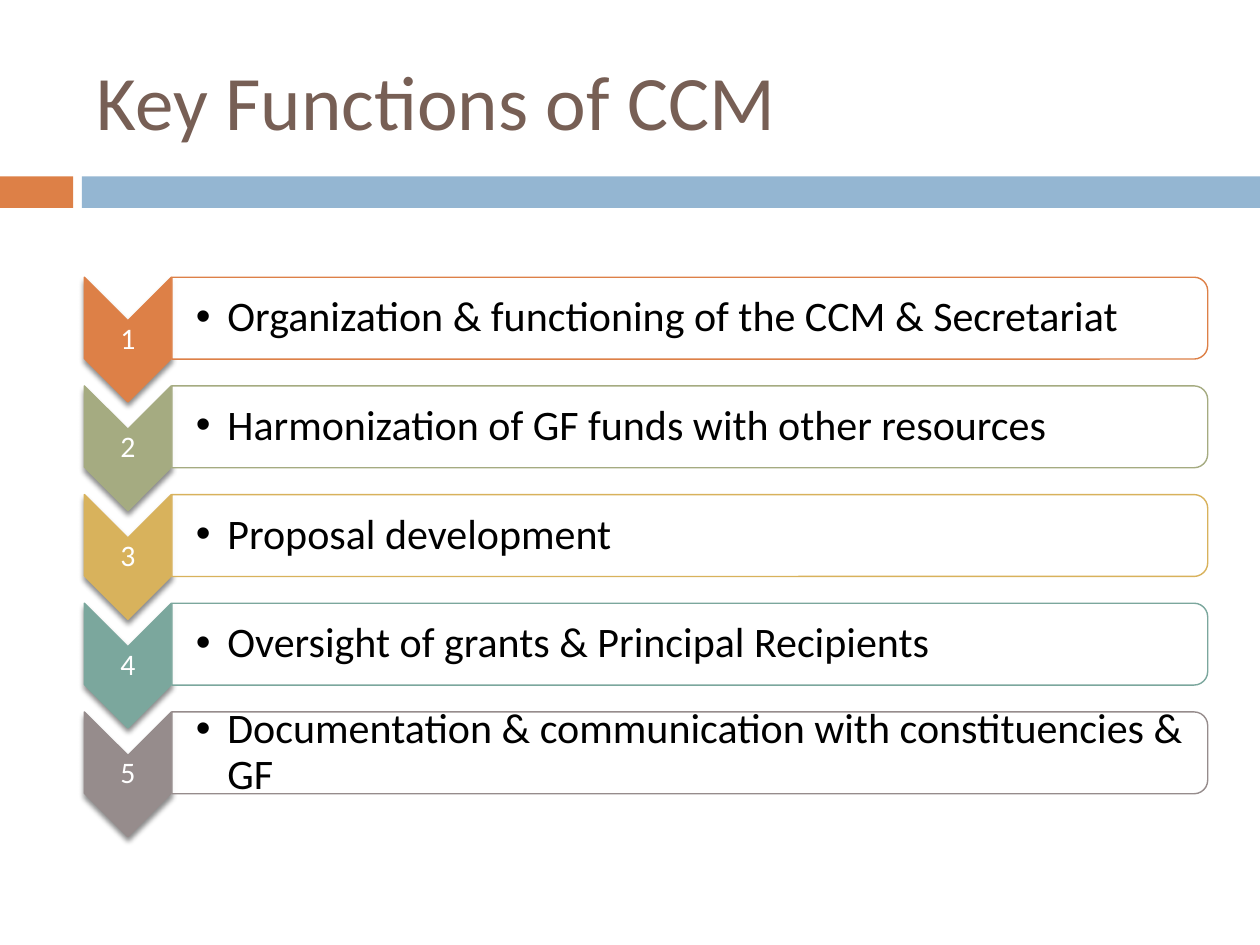
from dataclasses import dataclass

import lxml.etree
import pptx
import pptx.dml.color
import pptx.enum.shapes
import pptx.enum.text
import pptx.oxml.ns
import pptx.util

Inches = pptx.util.Inches
Shapes = pptx.enum.shapes.MSO_SHAPE
Align = pptx.enum.text.PP_ALIGN
qn = pptx.oxml.ns.qn


@dataclass(frozen=True)
class Theme:
    font: str = "Calibri"
    title: str = "775F55"
    accent: str = "DD8047"
    band: str = "94B6D2"
    text: str = "000000"
    white: str = "FFFFFF"
    title_size: int = 44
    body_size: int = 24
    number_size: int = 17
    line_width: float = 0.79


@dataclass(frozen=True)
class Box:
    left: float
    top: float
    width: float
    height: float

    def turned(self) -> "Box":
        """The frame that covers this box after a quarter turn."""
        shift = (self.width - self.height) / 2
        return Box(self.left + shift, self.top - shift, self.height, self.width)

    def lengths(self) -> list[int]:
        return [Inches(n) for n in (self.left, self.top, self.width, self.height)]


@dataclass(frozen=True)
class Function:
    text: str
    color: str


THEME = Theme()
SLIDE_WIDTH, SLIDE_HEIGHT = 10, 7.5

# Grid of the list: one row per function, a chevron column and a panel column
FIRST_ROW, ROW_PITCH = 2.2, 0.8625
CHEVRON_LEFT, CHEVRON_WIDTH, CHEVRON_HEIGHT = 0.67, 0.69, 0.99
PANEL_LEFT, PANEL_WIDTH, PANEL_HEIGHT = 1.365, 8.22, 0.65

FUNCTIONS = [
    Function("Organization & functioning of the CCM & Secretariat", "DD8047"),
    Function("Harmonization of GF funds with other resources", "A5AB81"),
    Function("Proposal development", "D8B25C"),
    Function("Oversight of grants & Principal Recipients", "7BA79D"),
    Function("Documentation & communication with constituencies & GF", "968C8C"),
]


def rgb(color: str) -> pptx.dml.color.RGBColor:
    return pptx.dml.color.RGBColor.from_string(color)


def add_filled(slide, kind, box: Box, fill: str, line: str | None = None, rotation: int = 0):
    shape = slide.shapes.add_shape(kind, *box.lengths())
    shape.rotation = rotation
    shape.shadow.inherit = False
    shape.fill.solid()
    shape.fill.fore_color.rgb = rgb(fill)
    if line:
        shape.line.color.rgb = rgb(line)
        shape.line.width = pptx.util.Pt(THEME.line_width)
    else:
        shape.line.fill.background()
    return shape


def add_text(slide, box: Box, text: str, size: int, color: str, insets=None, align=Align.LEFT):
    frame = slide.shapes.add_textbox(*box.lengths()).text_frame
    frame.word_wrap = True
    frame.vertical_anchor = pptx.enum.text.MSO_ANCHOR.MIDDLE
    if insets:
        frame.margin_left, frame.margin_top, frame.margin_right, frame.margin_bottom = map(Inches, insets)
    paragraph = frame.paragraphs[0]
    paragraph.alignment = align
    run = paragraph.add_run()
    run.text = text
    run.font.name = THEME.font
    run.font.size = pptx.util.Pt(size)
    run.font.color.rgb = rgb(color)
    return paragraph


def add_soft_shadow(shape) -> None:
    effects = shape.element.spPr.find(qn("a:effectLst"))
    shadow = lxml.etree.SubElement(effects, qn("a:outerShdw"), blurRad="38100",
                                   dist="30000", dir="5400000", rotWithShape="0")
    color = lxml.etree.SubElement(shadow, qn("a:srgbClr"), val=THEME.text)
    lxml.etree.SubElement(color, qn("a:alpha"), val="45000")


def set_opacity(shape, percent: int) -> None:
    color = shape.element.spPr.find(qn("a:solidFill")).find(qn("a:srgbClr"))
    lxml.etree.SubElement(color, qn("a:alpha"), val=str(percent * 1000))


def add_bullet(paragraph, indent: float) -> None:
    paragraph.level = 1
    properties = paragraph._p.get_or_add_pPr()
    properties.set("marL", str(Inches(indent)))
    properties.set("indent", str(-Inches(indent)))
    lxml.etree.SubElement(properties, qn("a:buFont"), typeface="Arial")
    lxml.etree.SubElement(properties, qn("a:buChar"), char="•")


def add_function(slide, row: int, function: Function) -> None:
    top = FIRST_ROW + row * ROW_PITCH

    # Numbered chevron pointing down
    chevron = Box(CHEVRON_LEFT, top, CHEVRON_WIDTH, CHEVRON_HEIGHT)
    add_soft_shadow(add_filled(slide, Shapes.CHEVRON, chevron.turned(),
                               function.color, function.color, 90))
    number_box = Box(CHEVRON_LEFT, top + CHEVRON_WIDTH / 2, CHEVRON_WIDTH,
                     CHEVRON_HEIGHT - CHEVRON_WIDTH)
    number = add_text(slide, number_box, str(row + 1), THEME.number_size, THEME.white,
                      (0.01,) * 4, Align.CENTER)
    number.line_spacing = 0.9

    # Panel rounded on its right side
    panel = Box(PANEL_LEFT, top, PANEL_WIDTH, PANEL_HEIGHT)
    set_opacity(add_filled(slide, Shapes.ROUND_2_SAME_RECTANGLE, panel.turned(),
                           THEME.white, function.color, 90), 90)
    label_box = Box(PANEL_LEFT, top + 0.03, PANEL_WIDTH - 0.03, PANEL_HEIGHT - 0.06)
    label = add_text(slide, label_box, function.text, THEME.body_size, THEME.text,
                     (0.19, 0.02, 0.02, 0.02))
    label.line_spacing = 0.9
    add_bullet(label, 0.25)


def main() -> None:
    presentation = pptx.Presentation()
    presentation.slide_width = Inches(SLIDE_WIDTH)
    presentation.slide_height = Inches(SLIDE_HEIGHT)
    slide = presentation.slides.add_slide(presentation.slide_layouts[6])

    # Divider band
    band_left = 0.065 * SLIDE_WIDTH
    add_filled(slide, Shapes.RECTANGLE, Box(0, 1.4, 0.58, 0.25), THEME.accent)
    add_filled(slide, Shapes.RECTANGLE, Box(band_left, 1.4, SLIDE_WIDTH - band_left, 0.25), THEME.band)

    # Title
    add_text(slide, Box(CHEVRON_LEFT, 0.25, 8.92, 1.08), "Key Functions of CCM",
             THEME.title_size, THEME.title)

    # List of functions
    for row, function in enumerate(FUNCTIONS):
        add_function(slide, row, function)

    presentation.save("out.pptx")


if __name__ == "__main__":
    main()
